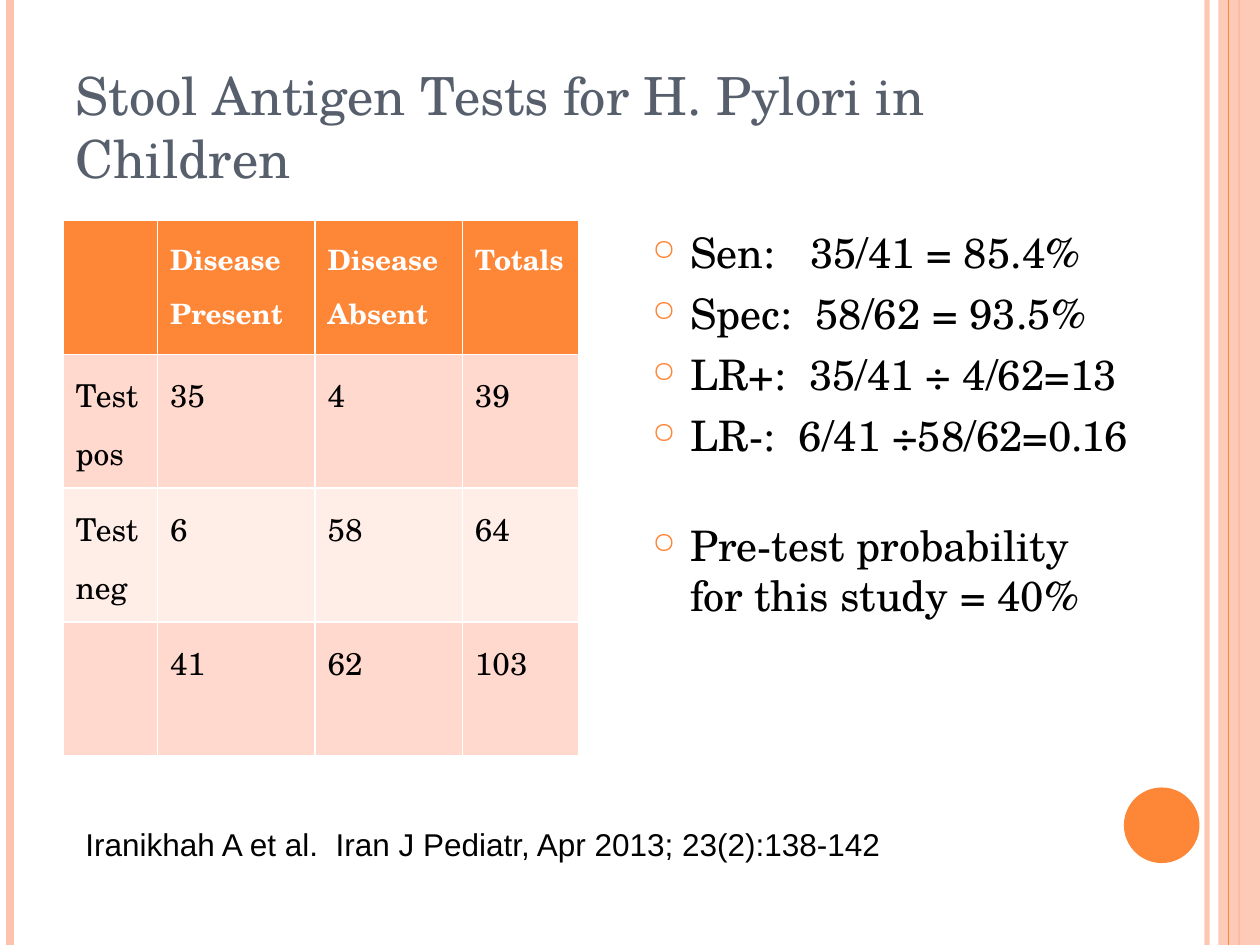
from lxml.etree import SubElement
from pptx import Presentation
from pptx.dml.color import RGBColor
from pptx.enum.shapes import MSO_CONNECTOR, MSO_SHAPE
from pptx.enum.text import MSO_ANCHOR
from pptx.oxml.ns import qn
from pptx.util import Inches, Pt

SERIF = "TeX Gyre Schola"
ORANGE, PEACH, SLATE = "FE8637", "FEC3AE", "575F6D"
WHITE, BLACK = "FFFFFF", "000000"
BANDS = [ORANGE, "FFD9CE", "FFEDE8", "FFD9CE"]


def color(code):
    return RGBColor.from_string(code)


def fade(fill, part, share):
    tone = part.find(".//" + qn("a:srgbClr"))
    SubElement(tone, qn("a:alpha"), val=str(share * 1000))


class Deck:
    def __init__(self):
        self.file = Presentation()
        self.file.slide_width, self.file.slide_height = Inches(10), Inches(7.5)
        self.slide = self.file.slides.add_slide(self.file.slide_layouts[5])
        self.shapes = self.slide.shapes

    def style(self, para, size, tone=BLACK, face=SERIF, bold=False):
        font = para.font
        font.name, font.size, font.bold = face, Pt(size), bold
        font.color.rgb = color(tone)

    def title(self, text, box):
        head = self.shapes.title
        head.left, head.top, head.width, head.height = map(Inches, box)
        frame = head.text_frame
        frame.text = text
        frame.vertical_anchor = MSO_ANCHOR.BOTTOM
        para = frame.paragraphs[0]
        para.alignment = 1
        self.style(para, 30, SLATE)

    def rule(self, x, tone, width, share=100):
        line = self.shapes.add_connector(
            MSO_CONNECTOR.STRAIGHT, Inches(x), 0, Inches(x), Inches(7.5))
        line.line.color.rgb = color(tone)
        line.line.width = Pt(width)
        props = line._element.spPr
        if share < 100:
            fade(line, props, share)
        SubElement(props, qn("a:effectLst"))
        return line

    def shape(self, kind, box, tone, share=100):
        item = self.shapes.add_shape(kind, *map(Inches, box))
        item.shadow.inherit = False
        item.fill.solid()
        item.fill.fore_color.rgb = color(tone)
        item.line.fill.background()
        if share < 100:
            fade(item, item._element.spPr, share)
        return item

    def table(self, rows, box, widths):
        grid = self.shapes.add_table(
            len(rows), len(widths), *map(Inches, box)).table
        for col, width in zip(grid.columns, widths):
            col.width = Inches(width)
        for r, row in enumerate(rows):
            for c, text in enumerate(row):
                cell = grid.cell(r, c)
                cell.fill.solid()
                cell.fill.fore_color.rgb = color(BANDS[r])
                cell.text = text
                for para in cell.text_frame.paragraphs:
                    para.line_spacing = 1.25
                    if r == 0:
                        self.style(para, 16, WHITE, bold=True)
                    else:
                        self.style(para, 18)

    def text(self, lines, box, size, face=SERIF):
        frame = self.shapes.add_textbox(*map(Inches, box)).text_frame
        frame.word_wrap = True
        frame.text = "\n".join(lines)
        for para in frame.paragraphs:
            self.style(para, size, face=face)
        return frame.paragraphs

    def bullets(self, lines, box):
        paras = self.text(lines, box, 24)
        for para in paras:
            para.space_before = Pt(6)
            props = para._p.get_or_add_pPr()
            props.set("marL", str(Inches(0.3)))
            props.set("indent", str(Inches(-0.3)))
            tint = SubElement(props, qn("a:buClr"))
            SubElement(tint, qn("a:srgbClr"), val=ORANGE)
            SubElement(props, qn("a:buSzPct"), val="70000")
            SubElement(props, qn("a:buChar"), char="○")
            props.append(props.find(qn("a:defRPr")))
        paras[-1].space_before = Pt(34)


def main():
    deck = Deck()
    deck.rule(9.58, PEACH, 3, 93)
    deck.rule(0.08, PEACH, 4.5)
    mid = deck.rule(9.83, ORANGE, 1.5)
    band = deck.shape(MSO_SHAPE.RECTANGLE, (9.67, 0, 0.33, 7.5), PEACH, 87)
    mid.begin_connect(band, 0)
    mid.end_connect(band, 2)
    deck.rule(9.75, ORANGE, 0.75)
    deck.shape(MSO_SHAPE.OVAL, (8.92, 6.25, 0.6, 0.6), ORANGE)

    deck.title("Stool Antigen Tests for H. Pylori in Children",
               (0.5, 0.3, 8.17, 1.25))
    deck.table([
        ["", "Disease Present", "Disease Absent", "Totals"],
        ["Test pos", "35", "4", "39"],
        ["Test\nneg", "6", "58", "64"],
        ["", "41", "62", "103"],
    ], (0.5, 1.75, 4.08, 4.25), [0.75, 1.25, 1.17, 0.92])
    deck.bullets([
        "Sen:   35/41 = 85.4%",
        "Spec:  58/62 = 93.5%",
        "LR+:  35/41 ÷ 4/62=13",
        "LR-:  6/41 ÷58/62=0.16",
        "Pre-test probability for this study = 40%",
    ], (5.08, 1.75, 4, 5))
    deck.text(["Iranikhah A et al.  Iran J Pediatr, Apr 2013; 23(2):138-142"],
              (0.58, 6.5, 8.25, 0.4), 18, "Arial")
    deck.file.save("out.pptx")


if __name__ == "__main__":
    main()
